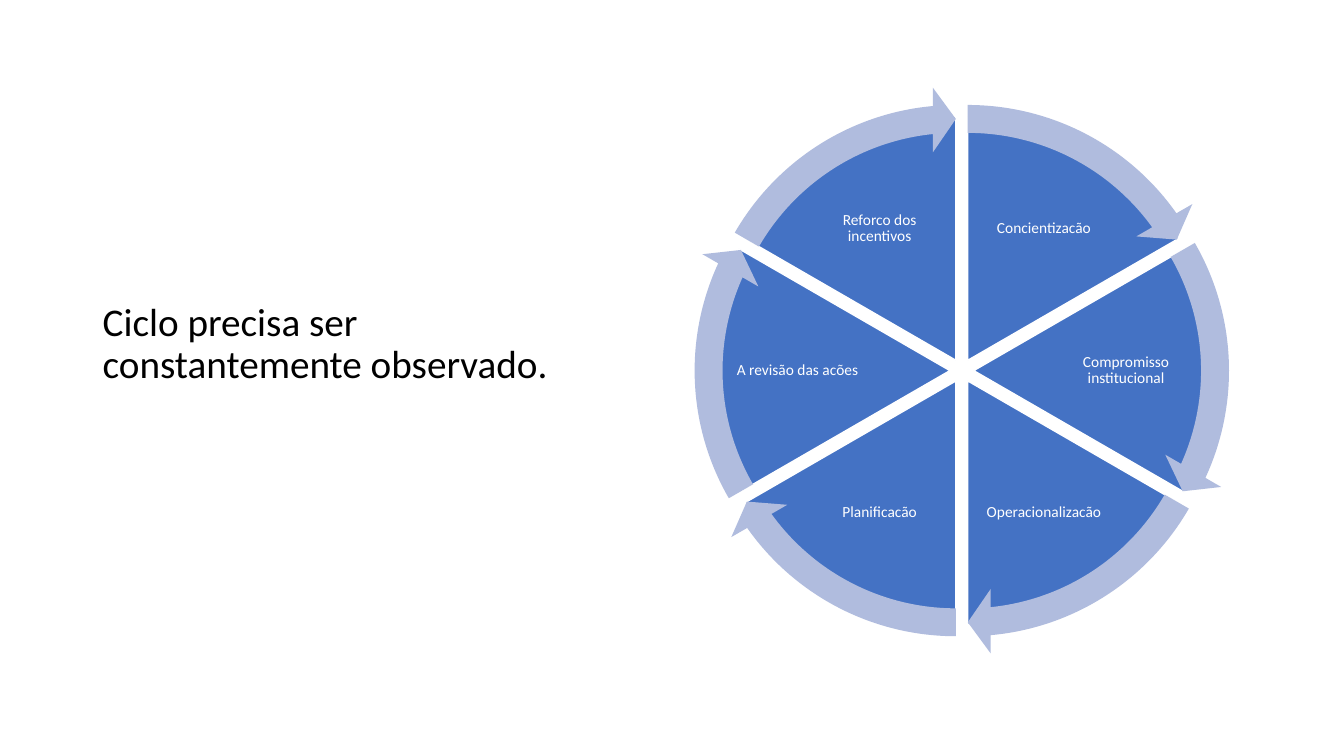
import math

import pptx
import pptx.dml.color
import pptx.enum.shapes
import pptx.enum.text
import pptx.util

Cm = pptx.util.Cm
Pt = pptx.util.Pt
SHAPE = pptx.enum.shapes.MSO_SHAPE
ALIGN = pptx.enum.text.PP_ALIGN

COLORS = {"text": "000000", "label": "FFFFFF", "slice": "4472C4",
          "gap": "FFFFFF", "arrow": "B0BCDE"}
STEPS = ["Concientizacão", "Compromisso institucional", "Operacionalizacão",
         "Planificacão", "A revisão das acões", "Reforco dos incentivos"]

# Cycle geometry in cm; shape angles in units of 100000 / 60000 degrees
CX, CY = 24.24, 9.34
PIE, ARROW, SHIFT = 12.27, 13.79, 0.3
LABEL_R, LABEL_W, LABEL_H = 4.14, 3.35, 2.48
TURN, TOP = 216, 162
STEP = TURN / len(STEPS)

prs = pptx.Presentation()
prs.slide_width, prs.slide_height = Cm(33.87), Cm(19.05)
s = prs.slides.add_slide(prs.slide_layouts[6])


def add_text(text, x, y, w, h, size, color, align, inset):
    tf = s.shapes.add_textbox(Cm(x), Cm(y), Cm(w), Cm(h)).text_frame
    tf.word_wrap = True
    tf.vertical_anchor = pptx.enum.text.MSO_ANCHOR.MIDDLE
    tf.margin_left = tf.margin_right = Cm(inset)
    tf.margin_top = tf.margin_bottom = Cm(inset / 2)
    tf.text = text
    p = tf.paragraphs[0]
    p.alignment = align
    p.line_spacing = 0.9
    font = p.runs[0].font
    font.name, font.size = "Calibri", Pt(size)
    font.color.rgb = pptx.dml.color.RGBColor.from_string(COLORS[color])


def add_round(kind, i, size, fill, adjustments):
    """Add a round shape pushed outwards along the middle of step i."""
    a = math.radians(60 * i - 60)
    x = CX + SHIFT * math.cos(a) - size / 2
    y = CY + SHIFT * math.sin(a) - size / 2
    sp = s.shapes.add_shape(kind, Cm(x), Cm(y), Cm(size), Cm(size))
    sp.shadow.inherit = False
    sp.fill.solid()
    sp.fill.fore_color.rgb = pptx.dml.color.RGBColor.from_string(COLORS[fill])
    for n, value in enumerate(adjustments):
        sp.adjustments[n] = value
    return sp


# Title
add_text("Ciclo precisa ser constantemente observado.",
         2.34, 1.55, 13.51, 14.28, 28, "text", ALIGN.LEFT, 0.25)

# Slices and their labels
for i, step in enumerate(STEPS):
    start = (TOP + STEP * i) % TURN
    sp = add_round(SHAPE.PIE, i, PIE, "slice", [start, (start + STEP) % TURN])
    sp.line.color.rgb = pptx.dml.color.RGBColor.from_string(COLORS["gap"])
    sp.line.width = Pt(1)
    a = math.radians(60 * i - 60)
    add_text(step, CX + LABEL_R * math.cos(a) - LABEL_W / 2,
             CY + LABEL_R * math.sin(a) - LABEL_H / 2,
             LABEL_W, LABEL_H, 11, "label", ALIGN.CENTER, 0.04)

# Arrows around the slices
for i in range(len(STEPS)):
    start = (TOP + STEP * i) % TURN
    end = (start + STEP - 3.275) % TURN
    sp = add_round(SHAPE.CIRCULAR_ARROW, i, ARROW, "arrow",
                   [0.051, 3.275, end, start, 0.059])
    sp.line.fill.background()

prs.save("out.pptx")
